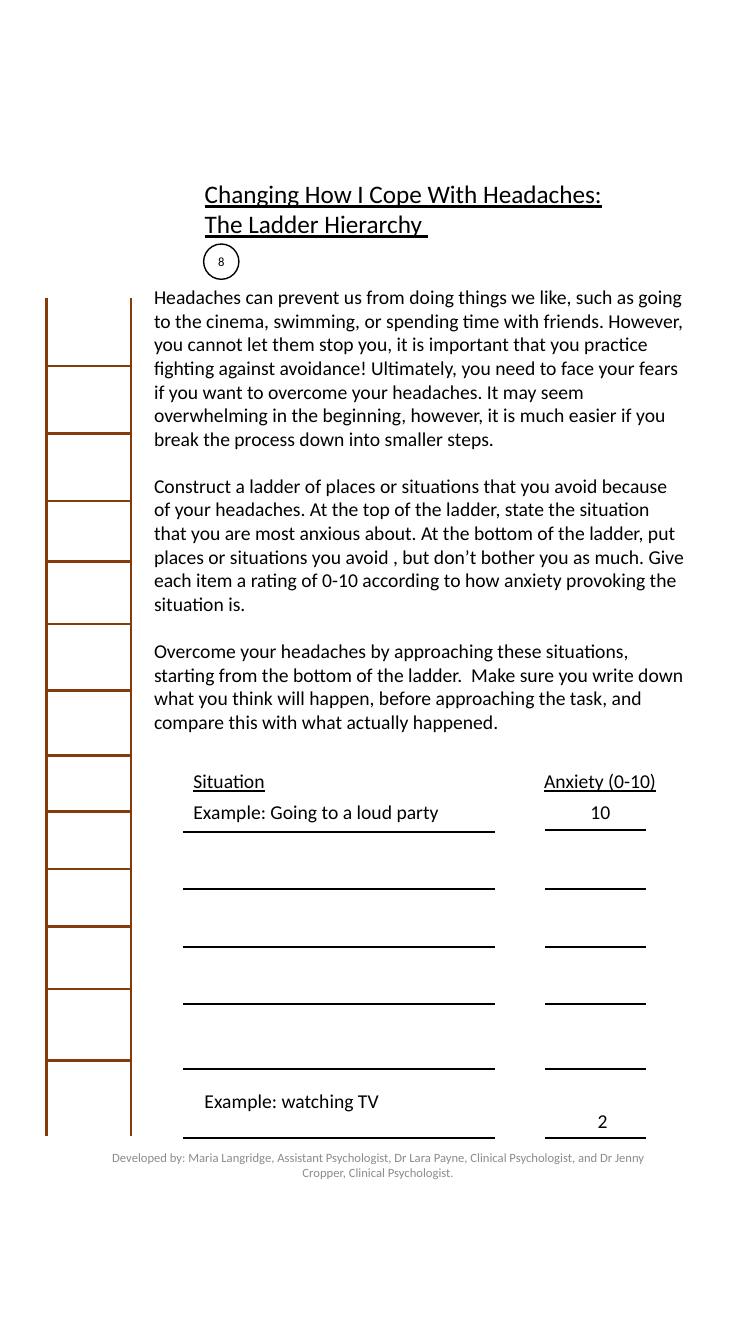
from lxml import etree
from pptx import Presentation
from pptx.dml.color import RGBColor
from pptx.enum.shapes import MSO_CONNECTOR, MSO_SHAPE
from pptx.enum.text import MSO_ANCHOR, PP_ALIGN
from pptx.oxml.ns import qn
from pptx.util import Emu, Pt

LINE, OVAL = MSO_CONNECTOR.STRAIGHT, MSO_SHAPE.OVAL
TOP, MIDDLE = MSO_ANCHOR.TOP, MSO_ANCHOR.MIDDLE
LEFT, CENTER = PP_ALIGN.LEFT, PP_ALIGN.CENTER
BLACK = RGBColor(0, 0, 0)
BROWN = RGBColor(0x84, 0x3C, 0x0B)
GREY = RGBColor(0x8C, 0x8C, 0x8C)
FONT = "Calibri"
PX = 9144  # 100 px to the inch

TITLE = ["Changing How I Cope With Headaches:", "The Ladder Hierarchy "]
BODY = [
    "Headaches can prevent us from doing things we like, such as going to the "
    "cinema, swimming, or spending time with friends. However, you cannot let "
    "them stop you, it is important that you practice fighting against "
    "avoidance! Ultimately, you need to face your fears if you want to overcome "
    "your headaches. It may seem overwhelming in the beginning, however, it is "
    "much easier if you break the process down into smaller steps.",
    "Construct a ladder of places or situations that you avoid because of your "
    "headaches. At the top of the ladder, state the situation that you are most "
    "anxious about. At the bottom of the ladder, put places or situations you "
    "avoid , but don’t bother you as much. Give each item a rating of 0-10 "
    "according to how anxiety provoking the situation is.",
    "Overcome your headaches by approaching these situations, starting from the "
    "bottom of the ladder.  Make sure you write down what you think will happen, "
    "before approaching the task, and compare this with what actually happened.",
]
CREDIT = ("Developed by: Maria Langridge, Assistant Psychologist, Dr Lara Payne, "
          "Clinical Psychologist, and Dr Jenny Cropper, Clinical Psychologist.")
RUNGS = [67, 134, 201, 261, 323, 389, 453, 509, 566, 623, 685, 756]
RULES = [67, 124, 181, 238, 302, 371]


def px(*nums):
    return [Emu(n * PX) for n in nums]


def write(shape, paras, size=14, color=BLACK, under=False, align=LEFT,
          anchor=TOP, gap=0, pad=(10, 5)):
    """Fill a shape with paragraphs; pad is the side and top margin in px."""
    frame = shape.text_frame
    frame.word_wrap = True
    frame.vertical_anchor = anchor
    frame.margin_left = frame.margin_right = Emu(pad[0] * PX)
    frame.margin_top = frame.margin_bottom = Emu(pad[1] * PX)
    frame.text = "\n".join(paras)
    for para in frame.paragraphs:
        para.alignment = align
        para.space_after = Pt(gap)
        font = para.runs[0].font
        font.name, font.size, font.underline = FONT, Pt(size), under
        font.color.rgb = color


def label(slide, box, *paras, **form):
    write(slide.shapes.add_textbox(*px(*box)), paras, **form)


def line(slide, x1, y1, x2, y2, color, width):
    rule = slide.shapes.add_connector(LINE, *px(x1, y1, x2, y2))
    rule.line.color.rgb = color
    rule.line.width = Pt(width)
    etree.SubElement(rule._element.spPr, qn("a:effectLst"))


def head(slide, x, y, w, h):
    title = slide.shapes.title
    title.left, title.top, title.width, title.height = px(x, y, w, h)
    write(title, TITLE, size=18, under=True)
    badge = slide.shapes.add_shape(OVAL, *px(x + 9, y + 70, 35, 35))
    badge.shadow.inherit = False
    badge.fill.background()
    badge.line.color.rgb = BLACK
    badge.line.width = Pt(1)
    write(badge, ["8"], size=9, align=CENTER, anchor=MIDDLE, pad=(0, 0))


def ladder(slide, x, y, w, h):
    for side in (x, x + w):
        line(slide, side, y, side, y + h, BROWN, 2)
    for rung in RUNGS:
        line(slide, x, y + rung, x + w, y + rung, BROWN, 2)


def sheet(slide, x, y, w):
    """Draw the form with its situation and anxiety columns."""
    rate = x + w - 100
    for rule in RULES:
        line(slide, x, y + rule, x + 309, y + rule, BLACK, 1.5)
        lift = 2 if rule == RULES[0] else 0
        line(slide, rate, y + rule - lift, rate + 100, y + rule - lift, BLACK, 1.5)
    cells = [
        (0, 0, 309, "Situation", True),
        (348, 0, 150, "Anxiety (0-10)", True),
        (0, 30, 309, "Example: Going to a loud party", False),
        (394, 30, 63, "10", False),
        (11, 317, 309, "Example: watching TV", False),
        (401, 337, 63, "2", False),
    ]
    for left, top, width, text, under in cells:
        label(slide, (x + left, y + top, width, 34), text, under=under)


def main():
    deck = Presentation()
    deck.slide_width, deck.slide_height = px(750, 1333)
    slide = deck.slides.add_slide(deck.slide_layouts[5])
    head(slide, 193, 172, 463, 71)
    ladder(slide, 46, 296, 84, 831)
    label(slide, (143, 278, 547, 458), *BODY, gap=17)
    sheet(slide, 182, 758, 459)
    label(slide, (94, 1120, 562, 71), CREDIT, size=9, color=GREY,
          align=CENTER, anchor=MIDDLE)
    deck.save("out.pptx")


if __name__ == "__main__":
    main()
